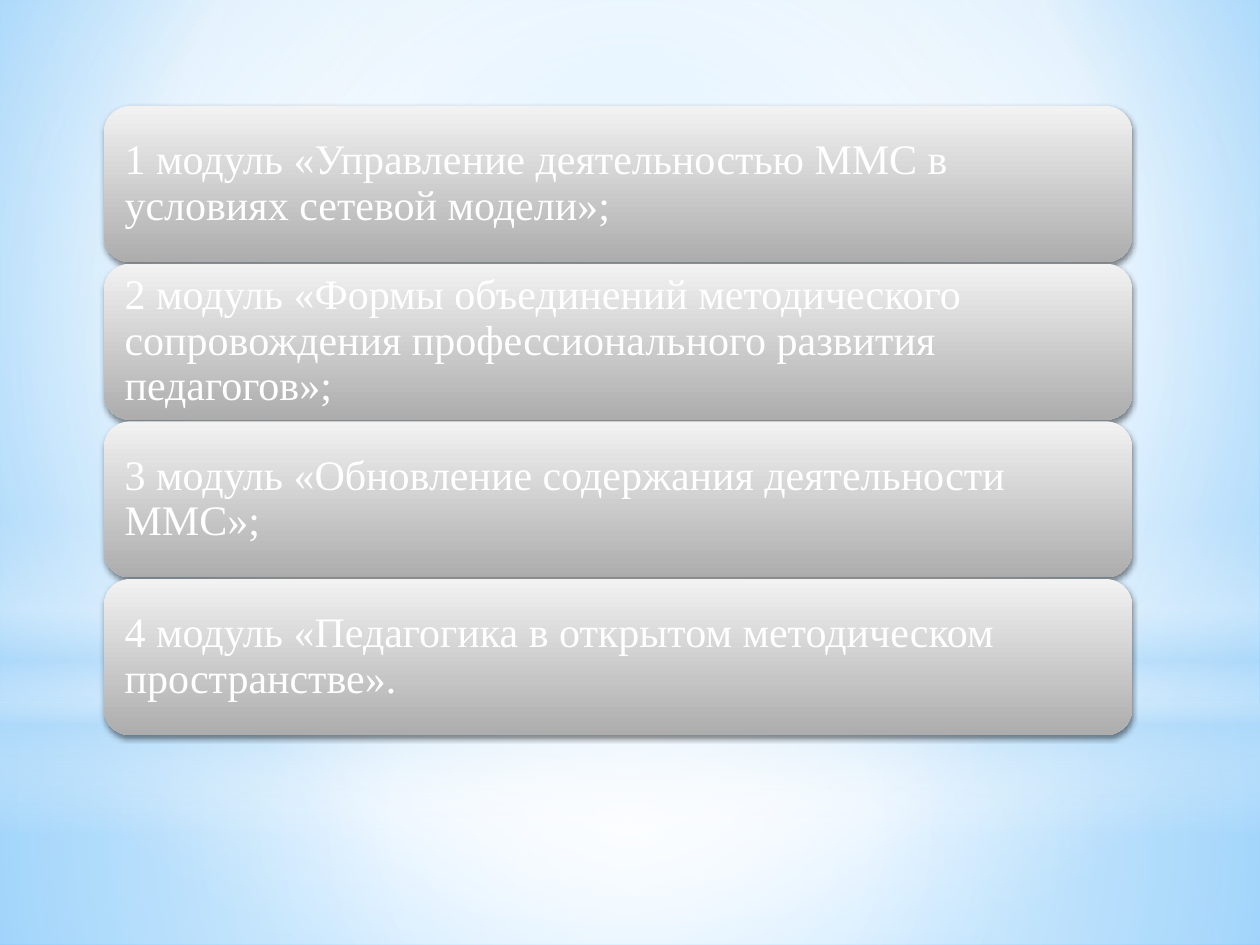
from pptx import Presentation
from pptx.dml.color import RGBColor
from pptx.enum.shapes import MSO_SHAPE
from pptx.enum.text import MSO_ANCHOR, PP_ALIGN
from pptx.oxml import parse_xml
from pptx.oxml.ns import nsdecls, qn
from pptx.util import Pt

SCALE = 914400 / 126
WIDTH, HEIGHT = 1260, 945
FONT = "Times New Roman"
WHITE = RGBColor(0xFF, 0xFF, 0xFF)
BLACK = RGBColor(0x00, 0x00, 0x00)
PALE = RGBColor(0xB4, 0xDC, 0xFA)
SKY = RGBColor(0x9E, 0xD5, 0xFF)
BLUE = RGBColor(0x5B, 0xB9, 0xFF)
LIGHT = RGBColor(0xF2, 0xF2, 0xF2)
GREY = RGBColor(0xAD, 0xAD, 0xAD)
CENTRE = (50, 50, 50, 50)
MODULES = [
    "1 модуль «Управление деятельностью ММС в условиях сетевой модели»;",
    "2 модуль «Формы объединений методического сопровождения "
    "профессионального развития педагогов»;",
    "3 модуль «Обновление содержания деятельности ММС»;",
    "4 модуль «Педагогика в открытом методическом пространстве».",
]


def px(n):
    return round(n * SCALE)


def tint(color, alpha):
    return f'<a:srgbClr val="{color}"><a:alpha val="{alpha * 1000}"/></a:srgbClr>'


def blend(item, stops, focus=None):
    marks = "".join(
        f'<a:gs pos="{pos * 1000}">{tint(color, alpha)}</a:gs>'
        for pos, color, alpha in stops
    )
    if focus:
        sides = " ".join(f'{k}="{v * 1000}"' for k, v in zip("ltrb", focus))
        way = f'<a:path path="circle"><a:fillToRect {sides}/></a:path>'
    else:
        way = '<a:lin ang="5400000" scaled="0"/>'
    grad = parse_xml(
        f'<a:gradFill {nsdecls("a")} rotWithShape="1">'
        f"<a:gsLst>{marks}</a:gsLst>{way}</a:gradFill>"
    )
    old = item.find(".//" + qn("a:solidFill"))
    old.getparent().replace(old, grad)


def add_form(slide, kind, box, stops, focus=None):
    form = slide.shapes.add_shape(kind, *map(px, box))
    form.shadow.inherit = False
    form.line.fill.background()
    form.fill.solid()
    blend(form.element, stops, focus)
    return form


def add_sky(slide, box):
    left, top, wide, high = box
    slide.background.fill.solid()
    blend(slide.element, [(0, SKY, 100), (60, WHITE, 100), (100, BLUE, 100)],
          (20, 10, 20, 60))
    rect, oval = MSO_SHAPE.RECTANGLE, MSO_SHAPE.OVAL
    edge = 703
    layers = [
        (rect, edge, high - edge,
         [(0, WHITE, 91), (37, WHITE, 76), (100, PALE, 79)], CENTRE),
        (rect, 0, edge,
         [(0, WHITE, 89), (48, WHITE, 62), (100, PALE, 79)], CENTRE),
        (rect, 519, 315,
         [(0, WHITE, 0), (29, WHITE, 30), (45, PALE, 40),
          (55, WHITE, 26), (65, PALE, 60), (100, WHITE, 0)], None),
        (oval, 221, edge, [(0, WHITE, 100), (56, WHITE, 0)], CENTRE),
    ]
    for kind, down, tall, stops, focus in layers:
        add_form(slide, kind, (left, top + down, wide, tall), stops, focus)


def add_card(slide, box, text):
    card = add_form(slide, MSO_SHAPE.ROUNDED_RECTANGLE, box,
                    [(0, LIGHT, 100), (100, GREY, 100)])
    card.element.spPr.find(qn("a:effectLst")).append(parse_xml(
        f'<a:outerShdw {nsdecls("a")} blurRad="{Pt(3.1)}" dist="{Pt(1.8)}" '
        f'dir="5400000" rotWithShape="0">{tint(BLACK, 45)}</a:outerShdw>'
    ))
    frame = card.text_frame
    frame.text = text
    frame.word_wrap = True
    frame.vertical_anchor = MSO_ANCHOR.MIDDLE
    frame.margin_left = frame.margin_right = px(13)
    frame.margin_top = frame.margin_bottom = px(13)
    para = frame.paragraphs[0]
    para.alignment = PP_ALIGN.LEFT
    para.line_spacing = 0.9
    para.space_after = Pt(8)
    font = para.runs[0].font
    font.name = FONT
    font.size = Pt(24)
    font.color.rgb = WHITE


def add_list(slide, box, items):
    left, top, wide, high = box
    tall = 156
    step = (high - tall) / (len(items) - 1)
    for i, text in enumerate(items):
        add_card(slide, (left, top + i * step, wide, tall), text)


def main():
    deck = Presentation()
    deck.slide_width, deck.slide_height = px(WIDTH), px(HEIGHT)
    slide = deck.slides.add_slide(deck.slide_layouts[6])
    add_sky(slide, (0, 0, WIDTH, HEIGHT))
    add_list(slide, (104, 106, 1028, 629), MODULES)
    deck.save("out.pptx")


if __name__ == "__main__":
    main()
